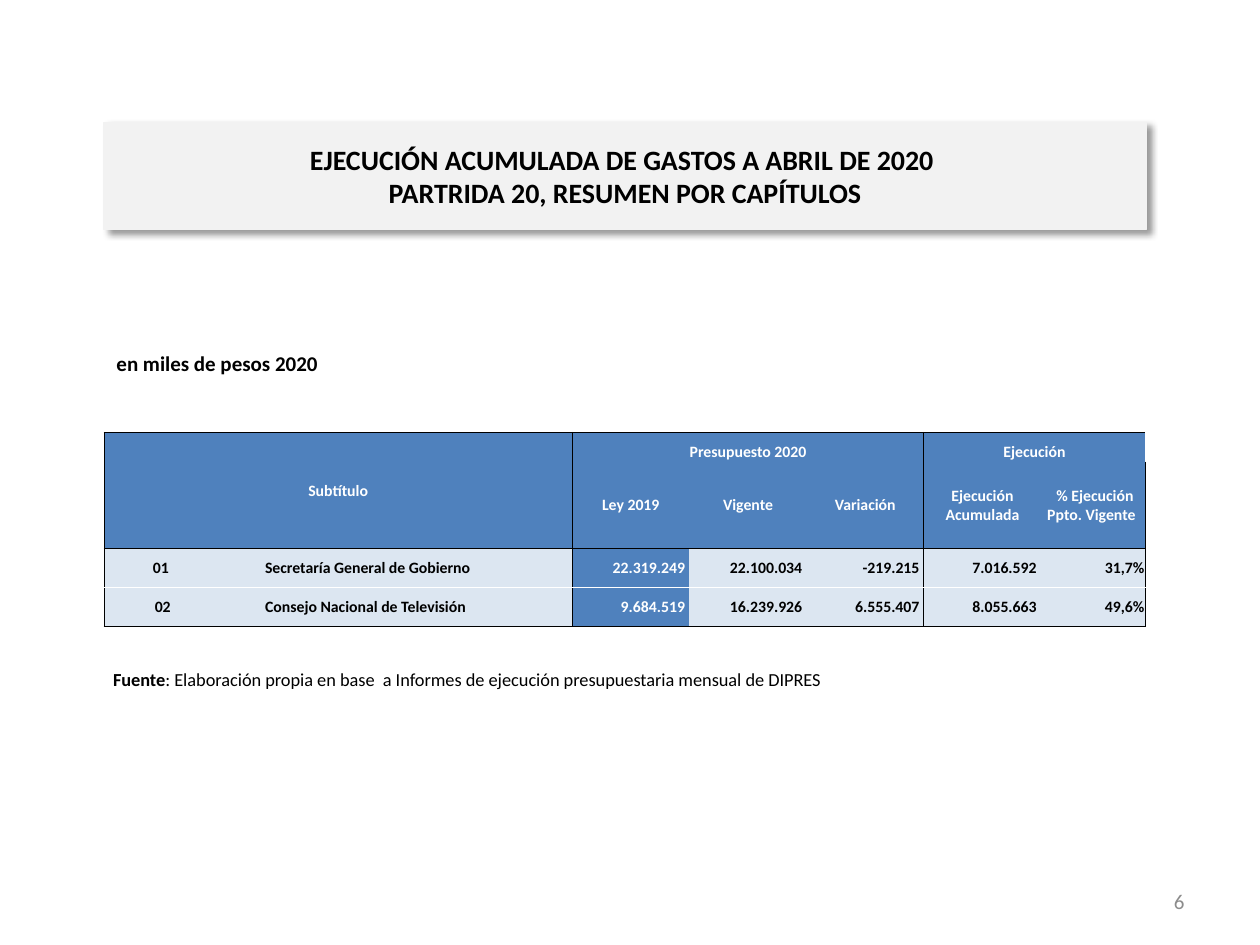
from lxml.etree import SubElement
from pptx import Presentation
from pptx.dml.color import RGBColor
from pptx.enum.text import MSO_ANCHOR as Anchor, MSO_AUTO_SIZE as AutoSize, PP_ALIGN as Align
from pptx.oxml import parse_xml
from pptx.oxml.ns import nsdecls, qn
from pptx.util import Pt

BLACK = RGBColor(0x00, 0x00, 0x00)
WHITE = RGBColor(0xFF, 0xFF, 0xFF)
PANEL = RGBColor(0xF2, 0xF2, 0xF2)
BLUE = RGBColor(0x4F, 0x81, 0xBD)
PALE = RGBColor(0xDC, 0xE6, 0xF1)
GREY = RGBColor(0x8C, 0x8C, 0x8C)

TITLE = ("EJECUCIÓN ACUMULADA DE GASTOS A ABRIL DE 2020 ", "PARTRIDA 20, RESUMEN POR CAPÍTULOS")
BUDGET = [
    ["Subtítulo", "", "", "Presupuesto 2020", "", "", "Ejecución", ""],
    ["", "", "", "Ley 2019", "Vigente", "Variación", "Ejecución Acumulada", " % Ejecución Ppto. Vigente "],
    ["01 ", "", "Secretaría General de Gobierno",
     "22.319.249 ", "22.100.034 ", "-219.215 ", "7.016.592 ", "31,7%"],
    ["02", "", "Consejo Nacional de Televisión",
     "9.684.519 ", "16.239.926 ", "6.555.407 ", "8.055.663 ", "49,6%"],
]
COLUMN_WIDTHS = (67, 24.5, 176, 67, 67, 67, 67, 59.5)
ROW_HEIGHTS = (16.75, 49.75, 21, 21)
MERGES = (((0, 0), (1, 2)), ((0, 3), (0, 5)), ((0, 6), (0, 7)))
HEADER_ROWS = 2
LAW_COLUMN = 3
GROUP_STARTS, GROUP_ENDS = (0, 3, 6), (2, 5, 7)


def add_run(paragraph, words, size, color=BLACK, bold=False):
    """Append one formatted run to a paragraph."""
    run = paragraph.add_run()
    run.text = words
    run.font.name = "Calibri"
    run.font.size = Pt(size)
    run.font.bold = bold
    run.font.color.rgb = color


def place_title(slide, left, top, width, height):
    """Turn the title placeholder into a grey panel with a soft shadow."""
    title = slide.shapes.title
    title.left, title.top, title.width, title.height = Pt(left), Pt(top), Pt(width), Pt(height)
    title.fill.solid()
    title.fill.fore_color.rgb = PANEL
    title.line.color.rgb = PANEL
    title.line.width = Pt(0.75)
    title._element.spPr.append(parse_xml(
        f'<a:effectLst {nsdecls("a")}><a:outerShdw blurRad="{Pt(4)}" dist="{Pt(3)}" dir="2700000" '
        'algn="tl" rotWithShape="0"><a:srgbClr val="000000"><a:alpha val="40000"/></a:srgbClr>'
        '</a:outerShdw></a:effectLst>'))
    frame = title.text_frame
    frame.auto_size = AutoSize.NONE
    frame.vertical_anchor = Anchor.MIDDLE
    heading = frame.paragraphs[0]
    heading.alignment = Align.CENTER
    add_run(heading, TITLE[0], 16, bold=True)
    heading.add_line_break()
    add_run(heading, TITLE[1], 16, bold=True)


def place_text(slide, left, top, width, height, runs, align=Align.LEFT, anchor=Anchor.TOP):
    """Place one line of text made of (words, size, color, bold) runs."""
    frame = slide.shapes.add_textbox(Pt(left), Pt(top), Pt(width), Pt(height)).text_frame
    frame.word_wrap = True
    frame.vertical_anchor = anchor
    line = frame.paragraphs[0]
    line.alignment = align
    for run in runs:
        add_run(line, *run)


def set_borders(cell, colors):
    """Draw the left, right, top and bottom borders; None hides one."""
    properties = cell._tc.get_or_add_tcPr()
    for position, (tag, color) in enumerate(zip(("a:lnL", "a:lnR", "a:lnT", "a:lnB"), colors)):
        border = properties.makeelement(qn(tag), {"w": str(Pt(0.5))})
        properties.insert(position, border)
        if color is None:
            SubElement(border, qn("a:noFill"))
        else:
            SubElement(SubElement(border, qn("a:solidFill")), qn("a:srgbClr"), val=str(color))


def cell_align(row, column):
    """Return the alignment of a table cell."""
    if row < HEADER_ROWS or column == 0:
        return Align.CENTER
    return Align.JUSTIFY if column < LAW_COLUMN else Align.RIGHT


def format_cell(cell, row, column, words):
    """Fill, frame and write one table cell."""
    dark = row < HEADER_ROWS or column == LAW_COLUMN
    cell.fill.solid()
    cell.fill.fore_color.rgb = BLUE if dark else PALE
    cell.margin_left = cell.margin_right = cell.margin_top = Pt(0.5)
    cell.margin_bottom = Pt(0)
    cell.vertical_anchor = Anchor.BOTTOM if row == 0 and column >= LAW_COLUMN else Anchor.MIDDLE
    paragraph = cell.text_frame.paragraphs[0]
    paragraph.alignment = cell_align(row, column)
    add_run(paragraph, words, 9, WHITE if dark else BLACK, True)
    set_borders(cell, (
        BLACK if column in GROUP_STARTS else None,
        BLACK if column in GROUP_ENDS else None,
        (BLACK, None, BLACK, WHITE)[row],
        (None, BLACK, WHITE, BLACK)[row],
    ))


def place_budget_table(slide, left, top):
    """Place the budget table with its grouped header."""
    table = slide.shapes.add_table(
        len(ROW_HEIGHTS), len(COLUMN_WIDTHS), Pt(left), Pt(top),
        Pt(sum(COLUMN_WIDTHS)), Pt(sum(ROW_HEIGHTS))).table
    table.horz_banding = False
    table.first_row = False
    for column, width in zip(table.columns, COLUMN_WIDTHS):
        column.width = Pt(width)
    for row, height in zip(table.rows, ROW_HEIGHTS):
        row.height = Pt(height)
    for r, row in enumerate(BUDGET):
        for c, words in enumerate(row):
            format_cell(table.cell(r, c), r, c, words)
    for first, last in MERGES:
        table.cell(*first).merge(table.cell(*last))


def main():
    """Build the slide and save it."""
    deck = Presentation()
    deck.slide_width, deck.slide_height = Pt(720), Pt(540)
    slide = deck.slides.add_slide(deck.slide_layouts.get_by_name("Title Only"))
    place_title(slide, 59.5, 70, 595.5, 61)
    place_text(slide, 516, 500.5, 168, 28.75, [("6", 12, GREY)], Align.RIGHT, Anchor.MIDDLE)
    place_text(slide, 57.5, 378, 594, 28.75, [
        ("Fuente", 10.5, BLACK, True),
        (": Elaboración propia en base  a Informes de ejecución presupuestaria mensual de DIPRES", 10.5),
    ])
    place_text(slide, 59.5, 196.5, 584, 22, [("en miles de pesos 2020", 12, BLACK, True)])
    place_budget_table(slide, 59.5, 247)
    deck.save("out.pptx")


if __name__ == "__main__":
    main()
